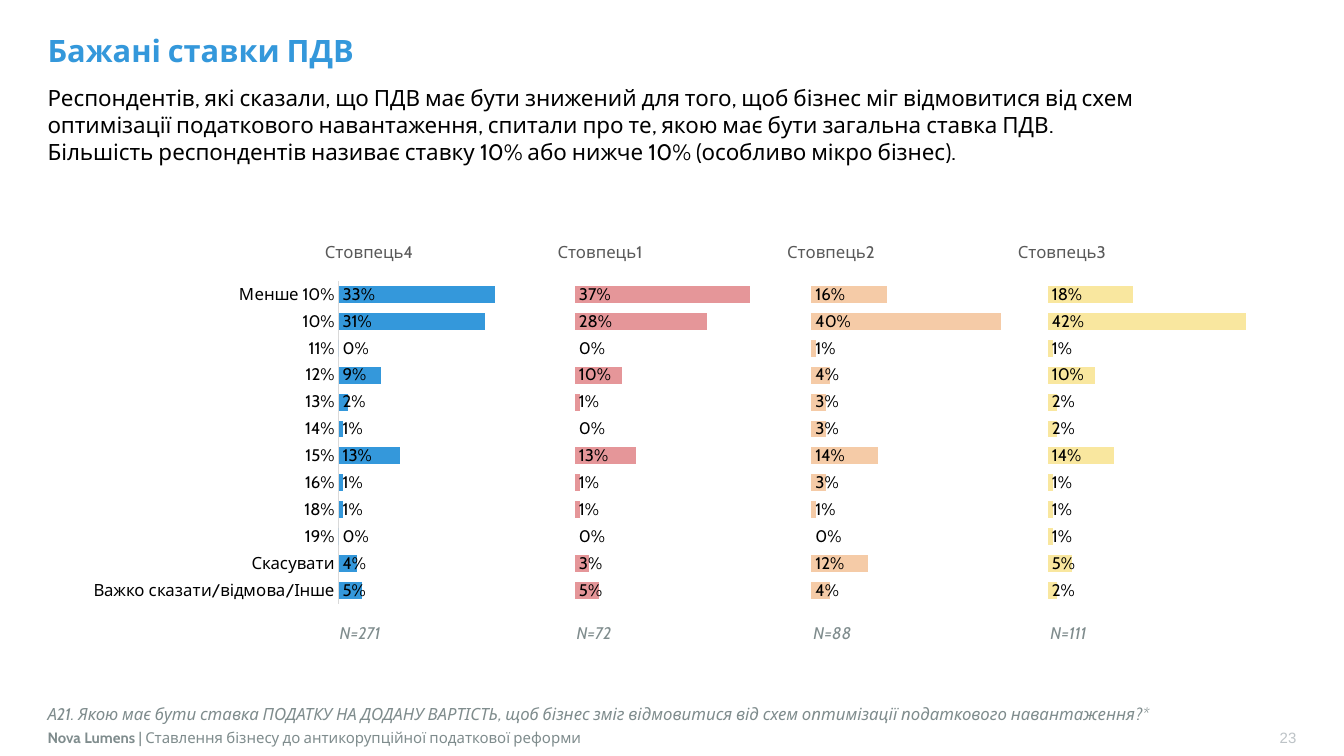
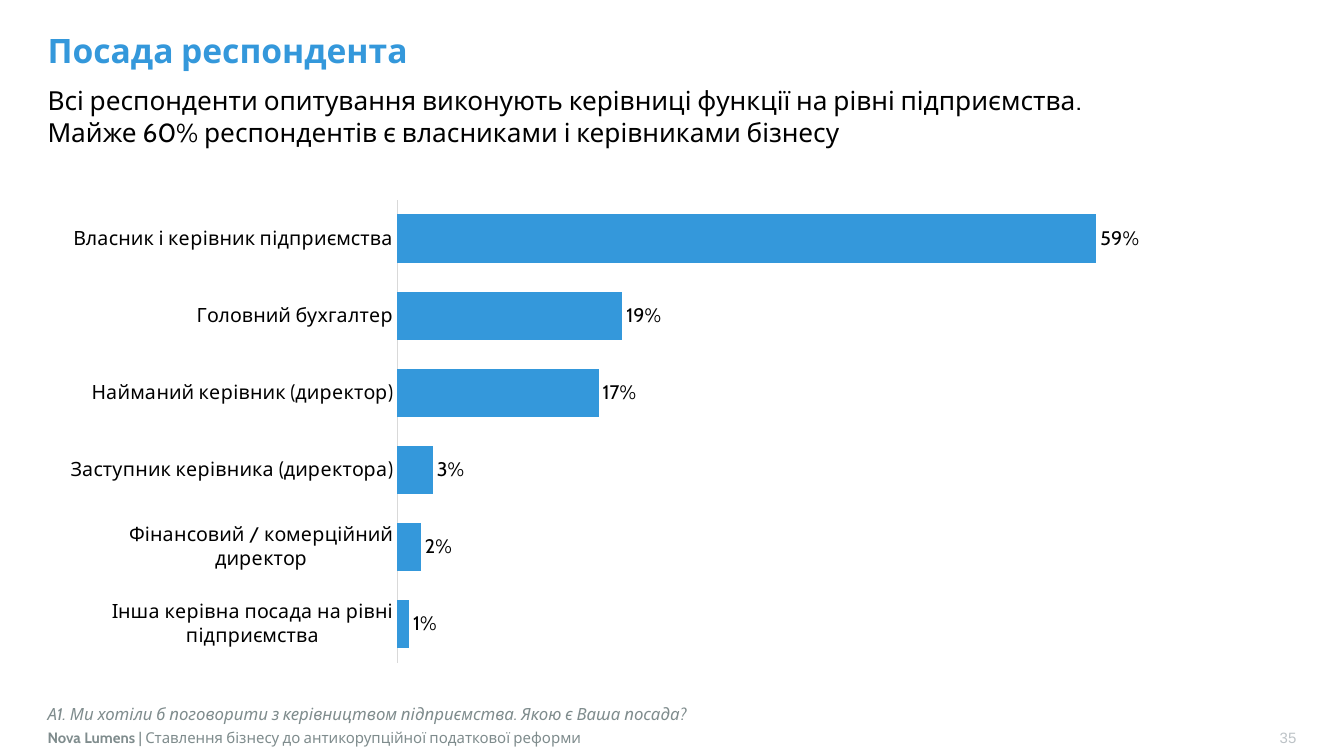
from dataclasses import dataclass

from pptx import Presentation
from pptx.chart.data import CategoryChartData
from pptx.dml.color import RGBColor
from pptx.enum.chart import XL_CHART_TYPE as ChartType
from pptx.enum.chart import XL_LABEL_POSITION as LabelPosition
from pptx.enum.chart import XL_TICK_MARK as TickMark
from pptx.enum.shapes import MSO_SHAPE as ShapeKind
from pptx.enum.text import MSO_ANCHOR as Anchor
from pptx.enum.text import PP_ALIGN as Align
from pptx.oxml import parse_xml
from pptx.oxml.ns import nsdecls
from pptx.util import Cm, Pt


@dataclass(frozen=True)
class Theme:
    font: str = "Cabin"
    number_font: str = "Arial"
    blue: str = "3498DB"
    red: str = "E59699"
    orange: str = "F5CBA7"
    yellow: str = "F9E79F"
    black: str = "000000"
    white: str = "FFFFFF"
    grey: str = "7F8C8D"
    heading_grey: str = "595959"
    number_grey: str = "BDC3C7"
    axis_grey: str = "D9D9D9"
    footer_size: float = 10.7
    small_size: float = 12
    label_size: float = 14
    margin: float = 1.2
    text_width: float = 26.14


THEME = Theme()
COMPANY = "Nova Lumens "
REPORT_TITLE = "| Ставлення бізнесу до антикорупційної податкової реформи"
POSITIONS_TITLE = "Посада респондента"
GROUP_SHARE = 0.5


@dataclass(frozen=True)
class Group:
    heading: str
    sample: str
    color: str
    values: tuple


RATES = ("Менше 10%", "10%", "11%", "12%", "13%", "14%", "15%", "16%", "18%",
         "19%", "Скасувати", "Важко сказати/відмова/Інше")
GROUPS = (
    Group("Стовпець4", "N=271", THEME.blue,
          (0.33, 0.31, 0, 0.09, 0.02, 0.01, 0.13, 0.01, 0.01, 0, 0.04, 0.05)),
    Group("Стовпець1", "N=72", THEME.red,
          (0.37, 0.28, 0, 0.1, 0.01, 0, 0.13, 0.01, 0.01, 0, 0.03, 0.05)),
    Group("Стовпець2", "N=88", THEME.orange,
          (0.16, 0.4, 0.01, 0.04, 0.03, 0.03, 0.14, 0.03, 0.01, 0, 0.12, 0.04)),
    Group("Стовпець3", "N=111", THEME.yellow,
          (0.18, 0.42, 0.01, 0.1, 0.02, 0.02, 0.14, 0.01, 0.01, 0.01, 0.05, 0.02)),
)
POSITIONS = {
    "Власник і керівник підприємства": 0.59,
    "Головний бухгалтер": 0.19,
    "Найманий керівник (директор)": 0.17,
    "Заступник керівника (директора)": 0.03,
    "Фінансовий / комерційний директор": 0.02,
    "Інша керівна посада на рівні підприємства": 0.01,
}


def style_font(font, size, color, bold=False, italic=False, name=THEME.font):
    font.name = name
    font.size = Pt(size)
    font.bold = bold
    font.italic = italic
    font.color.rgb = RGBColor.from_string(color)


def prepare_frame(shape, anchor, wrap=True):
    frame = shape.text_frame
    frame.margin_left = frame.margin_right = 0
    frame.margin_top = frame.margin_bottom = 0
    frame.vertical_anchor = anchor
    frame.word_wrap = wrap
    return frame


def add_text(slide, box, paragraphs, size, color, anchor=Anchor.TOP,
             align=Align.LEFT, wrap=True, **style):
    """Add a text box; box is left, top, width, height in centimetres."""
    shape = slide.shapes.add_textbox(*map(Cm, box))
    frame = prepare_frame(shape, anchor, wrap)
    frame.text = "\n".join(paragraphs)
    for paragraph in frame.paragraphs:
        paragraph.alignment = align
        for run in paragraph.runs:
            style_font(run.font, size, color, **style)


def add_footer_band(slide, left, width, align):
    """Add a white band and return its paragraph."""
    band = slide.shapes.add_shape(
        ShapeKind.RECTANGLE, Cm(left), Cm(18.32), Cm(width), Cm(0.53))
    band.shadow.inherit = False
    band.fill.solid()
    band.fill.fore_color.rgb = RGBColor.from_string(THEME.white)
    band.line.fill.background()
    paragraph = prepare_frame(band, Anchor.MIDDLE).paragraphs[0]
    paragraph.alignment = align
    return paragraph


def add_footer(slide, number):
    number_paragraph = add_footer_band(slide, 27.87, 4.8, Align.RIGHT)
    number_paragraph.text = str(number)
    style_font(number_paragraph.runs[0].font, THEME.footer_size,
               THEME.number_grey, name=THEME.number_font)
    report_paragraph = add_footer_band(
        slide, THEME.margin, THEME.text_width, Align.LEFT)
    for text, bold in ((COMPANY, True), (REPORT_TITLE, False)):
        run = report_paragraph.add_run()
        run.text = text
        style_font(run.font, THEME.footer_size, THEME.grey, bold=bold)


def add_report_slide(presentation, number, title, title_size, body, body_size,
                     body_width, question):
    slide = presentation.slides.add_slide(presentation.slide_layouts[6])
    add_footer(slide, number)
    add_text(slide, (THEME.margin, 0.73, THEME.text_width, 1.07), [title],
             title_size, THEME.blue, Anchor.MIDDLE, bold=True)
    add_text(slide, (THEME.margin, 2.13, body_width, 2.5), body, body_size,
             THEME.black)
    add_text(slide, (THEME.margin, 17.4, 31.47, 0.84), [question],
             THEME.small_size, THEME.grey, Anchor.BOTTOM, italic=True)
    return slide


def add_bar_chart(slide, kind, box, categories, series_values, label_size, maximum):
    """Add a bar chart without legend; series_values holds name, values pairs."""
    data = CategoryChartData(number_format="0%")
    data.categories = categories
    for name, values in series_values:
        data.add_series(name, values)
    chart = slide.shapes.add_chart(kind, *map(Cm, box), data).chart
    chart.has_legend = False
    chart.has_title = False
    style_font(chart.font, label_size, THEME.black)
    chart.plots[0].gap_width = 60
    chart.plots[0].vary_by_categories = False

    category_axis = chart.category_axis
    category_axis.reverse_order = True
    category_axis.major_tick_mark = TickMark.NONE
    category_axis.minor_tick_mark = TickMark.NONE
    category_axis.format.line.width = Pt(0.75)
    category_axis.format.line.color.rgb = RGBColor.from_string(THEME.axis_grey)
    style_font(category_axis.tick_labels.font, label_size, THEME.black)

    value_axis = chart.value_axis
    value_axis.visible = False
    value_axis.has_major_gridlines = False
    value_axis.minimum_scale = 0
    value_axis.maximum_scale = maximum
    return chart


def style_series(series, color, label_size, position):
    series.invert_if_negative = False
    series.format.fill.solid()
    series.format.fill.fore_color.rgb = RGBColor.from_string(color)
    labels = series.data_labels
    labels.show_value = True
    labels.number_format = "0%"
    labels.number_format_is_linked = False
    labels.position = position
    style_font(labels.font, label_size, THEME.black)


def set_plot_layout(chart, **fractions):
    """Fix the inner plot area as fractions of the chart."""
    plot_area = chart.element.xpath("c:chart/c:plotArea")[0]
    for layout in plot_area.xpath("c:layout"):
        plot_area.remove(layout)
    sizes = "".join(f'<c:{key} val="{value}"/>' for key, value in fractions.items())
    plot_area.insert(0, parse_xml(
        f'<c:layout {nsdecls("c")}><c:manualLayout>'
        '<c:layoutTarget val="inner"/><c:xMode val="edge"/><c:yMode val="edge"/>'
        f"{sizes}</c:manualLayout></c:layout>"))


def add_rates_chart(slide):
    """Draw the groups side by side, each padded to the same share."""
    series_values = []
    for group in GROUPS:
        padding = [round(GROUP_SHARE - value, 2) for value in group.values]
        series_values += [(group.heading, group.values), ("", padding)]
    chart = add_bar_chart(slide, ChartType.BAR_STACKED_100, (1.33, 5.9, 31.32, 9.6),
                          RATES, series_values, THEME.small_size, 1)
    chart.plots[0].overlap = 100
    set_plot_layout(chart, x=0.23, y=0.123, w=0.761, h=0.848)
    all_series = list(chart.plots[0].series)
    for group, series in zip(GROUPS, all_series[::2]):
        style_series(series, group.color, THEME.small_size, LabelPosition.INSIDE_BASE)
    for padding_series in all_series[1::2]:
        padding_series.format.fill.background()


def add_group_labels(slide):
    for index, group in enumerate(GROUPS):
        add_text(slide, (7.3 + 5.82 * index, 6.1, 4, 0.5), [group.heading],
                 THEME.small_size, THEME.heading_grey, Anchor.MIDDLE, Align.CENTER)
        add_text(slide, (8.56 + 5.97 * index, 15.7, 1.3, 0.51), [group.sample],
                 THEME.small_size, THEME.grey, wrap=False, italic=True)


def build_rates_slide(presentation):
    slide = add_report_slide(
        presentation, 23, "Бажані ставки ПДВ", 22,
        ["Респондентів, які сказали, що ПДВ має бути знижений для того, щоб бізнес "
         "міг відмовитися від схем оптимізації податкового навантаження, спитали "
         "про те, якою має бути загальна ставка ПДВ.",
         "Більшість респондентів називає ставку 10% або нижче 10% "
         "(особливо мікро бізнес)."],
        16, 27.91,
        "А21. Якою має бути ставка ПОДАТКУ НА ДОДАНУ ВАРТІСТЬ, щоб бізнес зміг "
        "відмовитися від схем оптимізації податкового навантаження?*")
    add_rates_chart(slide)
    add_group_labels(slide)


def build_positions_slide(presentation):
    slide = add_report_slide(
        presentation, 35, POSITIONS_TITLE, 24,
        ["Всі респонденти опитування виконують керівниці функції на рівні "
         "підприємства. Майже 60% респондентів є власниками і керівниками бізнесу"],
        18.7, THEME.text_width,
        "А1. Ми хотіли б поговорити з керівництвом підприємства. "
        "Якою є Ваша посада?")
    chart = add_bar_chart(
        slide, ChartType.BAR_CLUSTERED, (THEME.margin, 4.8, 28.8, 12.14),
        list(POSITIONS), [(POSITIONS_TITLE, list(POSITIONS.values()))],
        THEME.label_size, 0.65)
    style_series(chart.plots[0].series[0], THEME.blue, THEME.label_size,
                 LabelPosition.OUTSIDE_END)


def main():
    presentation = Presentation()
    presentation.slide_width = Cm(33.87)
    presentation.slide_height = Cm(19.05)
    build_rates_slide(presentation)
    build_positions_slide(presentation)
    presentation.save("out.pptx")


if __name__ == "__main__":
    main()
